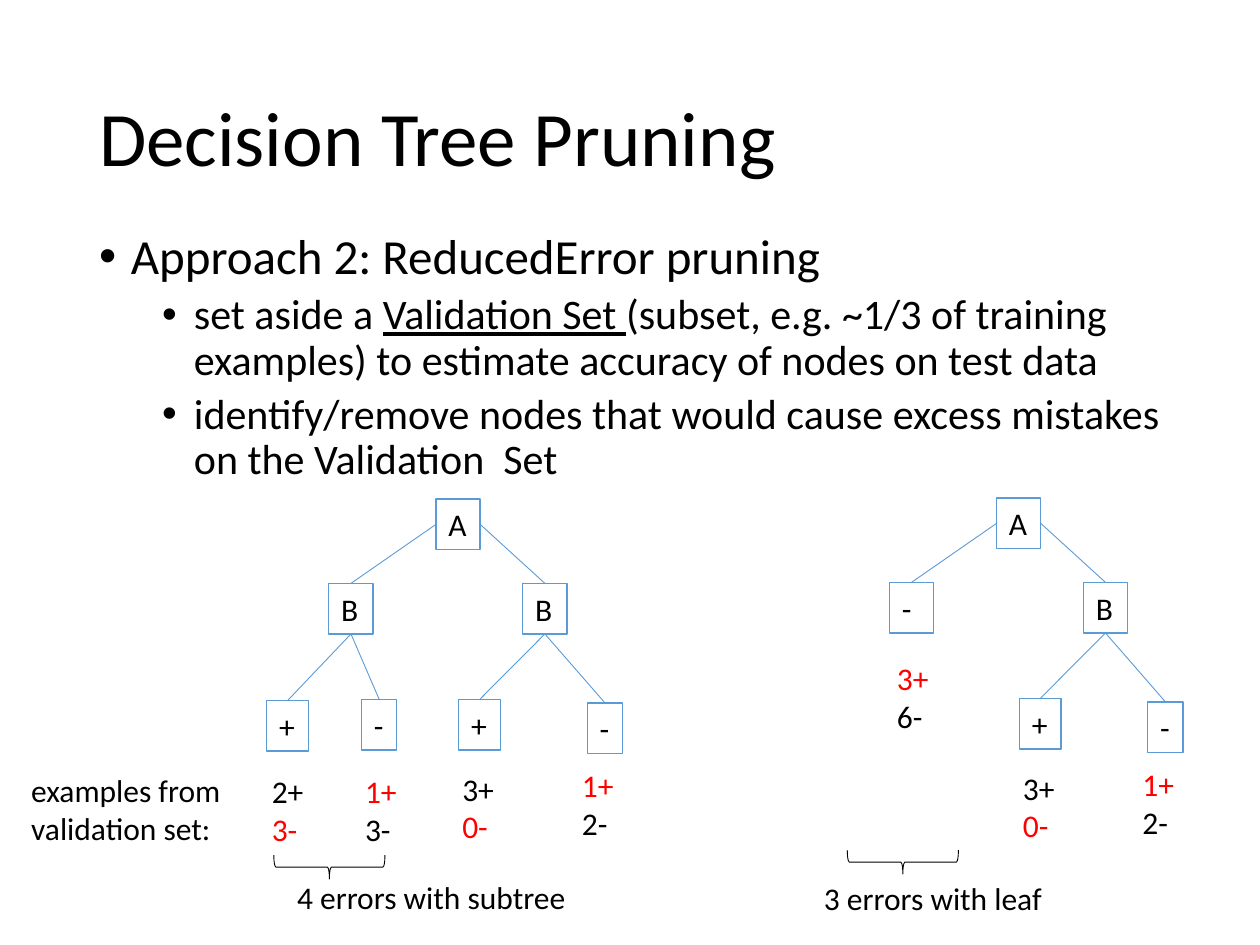
from dataclasses import dataclass

from pptx import Presentation
from pptx.dml.color import RGBColor
from pptx.enum.shapes import MSO_CONNECTOR, MSO_SHAPE
from pptx.enum.text import MSO_ANCHOR, MSO_AUTO_SIZE
from pptx.oxml.ns import qn
from pptx.util import Cm, Pt


@dataclass(frozen=True)
class Theme:
    font: str = "Calibri"
    ink: RGBColor = RGBColor(0, 0, 0)
    error: RGBColor = RGBColor(0xFF, 0, 0)
    edge: RGBColor = RGBColor(0x5B, 0x9B, 0xD5)
    title: int = 44
    head: int = 28
    point: int = 24
    label: int = 18
    border: float = 0.75
    thin: float = 0.5


@dataclass(frozen=True)
class Node:
    text: str
    x: float
    y: float
    width: float = 0.89
    kids: tuple = ()


THEME = Theme()
HIGH = 1.02
TOP, LEFT, BOTTOM, RIGHT = range(4)  # connection sites of a rectangle
SHIFT = (11.3, -0.02)  # from the full tree to the pruned one

B_LEFT = Node("B", 6.63, 11.76, kids=(
    Node("+", 5.38, 14.12, 0.84), Node("-", 7.29, 14.1, 0.71)))
B_RIGHT = Node("B", 10.54, 11.76, kids=(
    Node("+", 9.25, 14.1, 0.84), Node("-", 11.84, 14.17, 0.71)))
FULL = Node("A", 8.79, 10.06, kids=(B_LEFT, B_RIGHT))
PRUNED = Node("A", 8.79, 10.06, kids=(Node("-", 6.63, 11.76), B_RIGHT))

# left, top, count of "+", count of "-", wrong sign
RIGHT_COUNTS = [(9.07, 15.39, 3, 0, "-"), (11.48, 15.32, 1, 2, "+")]
FULL_COUNTS = [(5.23, 15.44, 2, 3, "-"), (7.11, 15.44, 1, 3, "+")] + RIGHT_COUNTS
PRUNED_COUNTS = [(6.53, 13.18, 3, 6, "+")] + RIGHT_COUNTS

POINTS = [
    ["set aside a ", "Validation Set ",
     "(subset, e.g. ~1/3 of training examples) to estimate accuracy"
     " of nodes on test data"],
    ["identify/remove nodes that would cause excess mistakes"
     " on the Validation  Set"],
]


def style(para, size, color=THEME.ink):
    font = para.font
    font.name, font.size, font.color.rgb = THEME.font, Pt(size), color


def add_text(slide, box, lines, size=THEME.label, wrap=False):
    """Put (text, color) lines in a text box and return its frame."""
    frame = slide.shapes.add_textbox(*map(Cm, box)).text_frame
    frame.word_wrap = wrap
    frame.auto_size = MSO_AUTO_SIZE.NONE if wrap else MSO_AUTO_SIZE.SHAPE_TO_FIT_TEXT
    for i, (text, color) in enumerate(lines):
        para = frame.add_paragraph() if i else frame.paragraphs[0]
        para.text = text
        style(para, size, color)
    return frame


def add_title(slide):
    frame = add_text(slide, (1.75, 1.01, 21.9, 3.68),
                     [("Decision Tree Pruning", THEME.ink)], THEME.title, True)
    frame.vertical_anchor = MSO_ANCHOR.MIDDLE
    frame.paragraphs[0].line_spacing = 0.9


def add_bullet(para, level, space):
    para.level, para.line_spacing, para.space_before = level, 0.9, Pt(space)
    props = para._p.get_or_add_pPr()
    props.set("marL", str(Cm(1.91 if level else 0.64)))
    props.set("indent", str(-Cm(0.64)))
    face = props.makeelement(qn("a:buFont"), {"typeface": "Arial"})
    mark = props.makeelement(qn("a:buChar"), {"char": "•"})
    props.insert_element_before(face, "a:tabLst", "a:defRPr", "a:extLst")
    props.insert_element_before(mark, "a:tabLst", "a:defRPr", "a:extLst")


def add_body(slide):
    frame = add_text(slide, (1.75, 4.55, 21.9, 5.56),
                     [("Approach 2: ReducedError pruning", THEME.ink)],
                     THEME.head, True)
    add_bullet(frame.paragraphs[0], 0, 10)
    for parts in POINTS:
        para = frame.add_paragraph()
        for i, part in enumerate(parts):
            run = para.add_run()
            run.text = part
            if i == 1:
                run.font.underline = True
        style(para, THEME.point)
        add_bullet(para, 1, 5)


def add_node(slide, node, shift):
    box = slide.shapes.add_shape(
        MSO_SHAPE.RECTANGLE, Cm(node.x + shift[0]), Cm(node.y + shift[1]),
        Cm(node.width), Cm(HIGH))
    box.shadow.inherit = False
    box.fill.background()
    box.line.color.rgb, box.line.width = THEME.edge, Pt(THEME.border)
    frame = box.text_frame
    frame.word_wrap = node.width == Node.width
    frame.auto_size = MSO_AUTO_SIZE.SHAPE_TO_FIT_TEXT
    frame.vertical_anchor = MSO_ANCHOR.TOP
    para = frame.paragraphs[0]
    para.text = node.text
    para.alignment = 1
    style(para, THEME.label)
    return box


def add_edge(slide, start, site, end):
    line = slide.shapes.add_connector(MSO_CONNECTOR.STRAIGHT, 0, 0, 0, 0)
    line.begin_connect(start, site)
    line.end_connect(end, TOP)
    line.line.color.rgb, line.line.width = THEME.edge, Pt(THEME.thin)
    props = line._element.spPr
    props.append(props.makeelement(qn("a:effectLst"), {}))


def add_tree(slide, node, shift, sites=(LEFT, RIGHT)):
    """Draw a node and all below it; edges leave the root at its sides."""
    box = add_node(slide, node, shift)
    for site, kid in zip(sites, node.kids):
        add_edge(slide, box, site, add_tree(slide, kid, shift, (BOTTOM, BOTTOM)))
    return box


def add_counts(slide, counts, shift):
    for x, y, plus, minus, wrong in counts:
        lines = [(f"{count}{sign}", THEME.error if sign == wrong else THEME.ink)
                 for count, sign in ((plus, "+"), (minus, "-"))]
        add_text(slide, (x + shift[0], y + shift[1], 1.17, 1.8), lines)


def add_brace(slide, x, y):
    brace = slide.shapes.add_shape(
        MSO_SHAPE.RIGHT_BRACE, Cm(x), Cm(y), Cm(0.48), Cm(2.24))
    brace.rotation = 90
    brace.shadow.inherit = False
    brace.fill.background()
    brace.line.color.rgb, brace.line.width = THEME.ink, Pt(THEME.thin)


def main():
    deck = Presentation()
    deck.slide_width, deck.slide_height = Cm(25.4), Cm(19.05)
    slide = deck.slides.add_slide(deck.slide_layouts[6])
    add_title(slide)
    add_body(slide)
    for tree, counts, shift in ((FULL, FULL_COUNTS, (0, 0)),
                                (PRUNED, PRUNED_COUNTS, SHIFT)):
        add_tree(slide, tree, shift)
        add_counts(slide, counts, shift)
    add_text(slide, (5.74, 17.58, 5.99, HIGH),
             [("4 errors with subtree", THEME.ink)])
    add_text(slide, (16.36, 17.6, 4.95, HIGH),
             [("3 errors with leaf", THEME.ink)])
    add_brace(slide, 6.4, 16.36)
    add_brace(slide, 17.96, 16.26)
    add_text(slide, (0.38, 15.42, 4.37, 1.8),
             [("examples from", THEME.ink), ("validation set:", THEME.ink)])
    deck.save("out.pptx")


if __name__ == "__main__":
    main()
